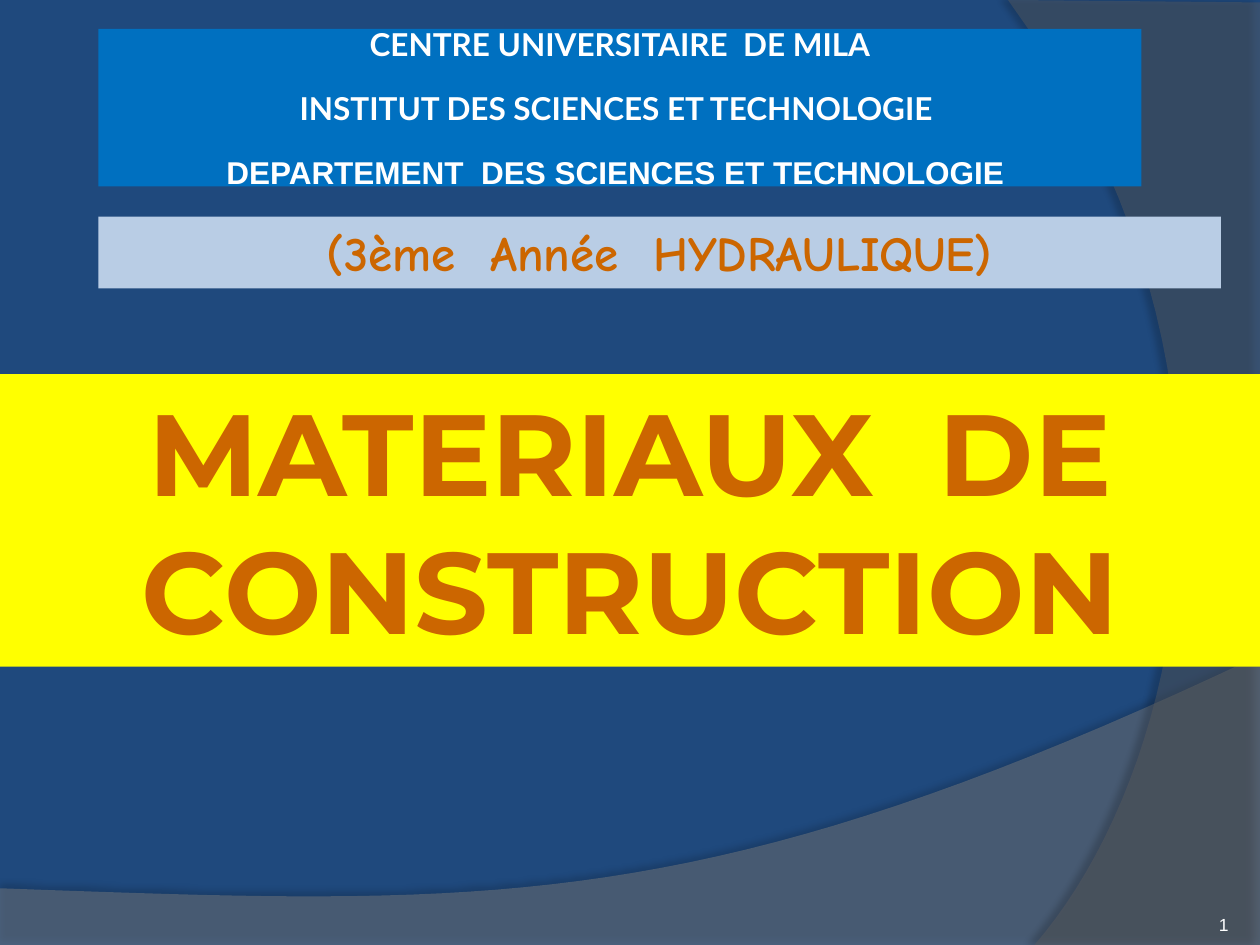
import pptx
import pptx.dml.color
import pptx.enum.shapes
import pptx.enum.text
import pptx.oxml
import pptx.oxml.ns
import pptx.util
from lxml import etree

Inches = pptx.util.Inches
Pt = pptx.util.Pt
ALIGN = pptx.enum.text.PP_ALIGN
ANCHOR = pptx.enum.text.MSO_ANCHOR
FIT = pptx.enum.text.MSO_AUTO_SIZE

COLORS = {
    "background": "1F497D", "wave": "7F7F7F", "arc": "5E5E5E", "shadow": "000000",
    "title_band": "FFFF00", "school_band": "0070C0", "year_band": "B9CDE5",
    "accent": "CC6600", "white": "FFFFFF",
}
NO_INSETS = dict.fromkeys(("margin_left", "margin_top", "margin_right", "margin_bottom"), 0)


def rgb(name):
    return pptx.dml.color.RGBColor.from_string(COLORS[name])


def set_attributes(target, values):
    for name, value in values.items():
        setattr(target, name, value)


def fill_solid(sp, color):
    sp.fill.solid()
    sp.fill.fore_color.rgb = rgb(color)


def place(sp, left, top, width, height):
    set_attributes(sp, {"left": Inches(left), "top": Inches(top),
                        "width": Inches(width), "height": Inches(height)})


def write_paragraph(p, text, size, font, color, bold=True, **formats):
    set_attributes(p, {"alignment": ALIGN.CENTER, **formats})
    r = p.add_run()
    r.text = text
    set_attributes(r.font, {"size": Pt(size), "name": font, "bold": bold})
    r.font.color.rgb = rgb(color)


def add_band(s, box, color, **frame):
    sp = s.shapes.add_shape(pptx.enum.shapes.MSO_SHAPE.RECTANGLE, *map(Inches, box))
    sp.shadow.inherit = False
    fill_solid(sp, color)
    sp.line.fill.background()
    set_attributes(sp.text_frame, {"word_wrap": True, "vertical_anchor": ANCHOR.TOP, **frame})
    return sp.text_frame


def bezier(points, steps=40):
    """Return points along a cubic curve, without its start."""
    curve = []
    for i in range(1, steps + 1):
        t = i / steps
        weights = ((1 - t) ** 3, 3 * t * (1 - t) ** 2, 3 * t * t * (1 - t), t ** 3)
        curve.append(tuple(sum(w * pt[axis] for w, pt in zip(weights, points))
                           for axis in (0, 1)))
    return curve


def add_swoosh(s, corners, curve, color, opacity, shadow):
    """Draw a translucent outline: straight corners, then a curve from the last one."""
    outline = [(Inches(x), Inches(y)) for x, y in corners + bezier(curve)]
    builder = s.shapes.build_freeform(*outline[0], scale=1.0)
    builder.add_line_segments(outline[1:], close=True)
    sp = builder.convert_to_shape()
    fill_solid(sp, color)
    sp.line.fill.background()
    sp.shadow.inherit = False

    qn = pptx.oxml.ns.qn
    props = sp.element.spPr
    fill_color = props.find(qn("a:solidFill"))[0]
    etree.SubElement(fill_color, qn("a:alpha"), val=str(opacity * 1000))
    alpha, blur, distance, angle = shadow
    effect = pptx.oxml.parse_xml(
        f'<a:outerShdw {pptx.oxml.ns.nsdecls("a")} blurRad="{Pt(blur)}" '
        f'dist="{Pt(distance)}" dir="{angle * 60000}" algn="ctr" rotWithShape="0">'
        f'<a:srgbClr val="{COLORS["shadow"]}"><a:alpha val="{alpha * 1000}"/></a:srgbClr>'
        '</a:outerShdw>')
    props.find(qn("a:effectLst")).append(effect)


def add_title(s, text):
    title = s.shapes.title
    title.element.getparent().append(title.element)  # in front of the swooshes
    place(title, 0, 2.97, 10, 2.32)
    fill_solid(title, "title_band")
    tf = title.text_frame
    set_attributes(tf, {"word_wrap": True, "vertical_anchor": ANCHOR.TOP,
                        "auto_size": FIT.SHAPE_TO_FIT_TEXT})
    write_paragraph(tf.paragraphs[0], text, 66, "Montserrat", "accent")


def add_school(s):
    tf = add_band(s, (0.78, 0.23, 8.28, 1.25), "school_band", **NO_INSETS)
    lines = [
        ("CENTRE UNIVERSITAIRE  DE MILA", "Lato", Pt(19.4), 1),
        ("INSTITUT DES SCIENCES ET TECHNOLOGIE ", "Lato", 1.5, 4.1),
        ("DEPARTEMENT  DES SCIENCES ET TECHNOLOGIE ", "Arial", 1.5, 4.1),
    ]
    for i, (text, font, spacing, before) in enumerate(lines):
        p = tf.add_paragraph() if i else tf.paragraphs[0]
        write_paragraph(p, text, 18, font, "white",
                        line_spacing=spacing, space_before=Pt(before))


def add_page_number(s, number):
    tf = s.shapes.add_textbox(*map(Inches, (8.92, 7.02, 0.83, 0.4))).text_frame
    set_attributes(tf, {"word_wrap": True, "vertical_anchor": ANCHOR.BOTTOM, **NO_INSETS})
    write_paragraph(tf.paragraphs[0], number, 10, "Arial", "white",
                    bold=False, alignment=ALIGN.RIGHT)


def main():
    prs = pptx.Presentation()
    prs.slide_width, prs.slide_height = Inches(10), Inches(7.5)
    s = prs.slides.add_slide(prs.slide_layouts[5])
    fill_solid(s.background, "background")

    add_swoosh(s, [(0, 7.05), (0, 7.51), (10, 7.51), (10, 5.2)],
               [(10, 5.2), (5.59, 7.29), (3.91, 7.19), (0, 7.05)],
               "wave", 45, (35, 4, 3.5, 270))
    add_swoosh(s, [(10, 0.02), (10, 7.5), (8.21, 7.5)],
               [(8.21, 7.5), (9.35, 6.19), (10.18, 3), (8, 0)],
               "arc", 40, (45, 4, 4, 180))
    add_title(s, "MATERIAUX  DE CONSTRUCTION")
    add_school(s)
    add_page_number(s, "1")
    year = add_band(s, (0.78, 1.72, 8.91, 0.57), "year_band",
                    auto_size=FIT.SHAPE_TO_FIT_TEXT)
    write_paragraph(year.paragraphs[0], "(3ème  Année  HYDRAULIQUE)",
                    28, "Comic Neue", "accent")
    prs.save("out.pptx")


if __name__ == "__main__":
    main()
